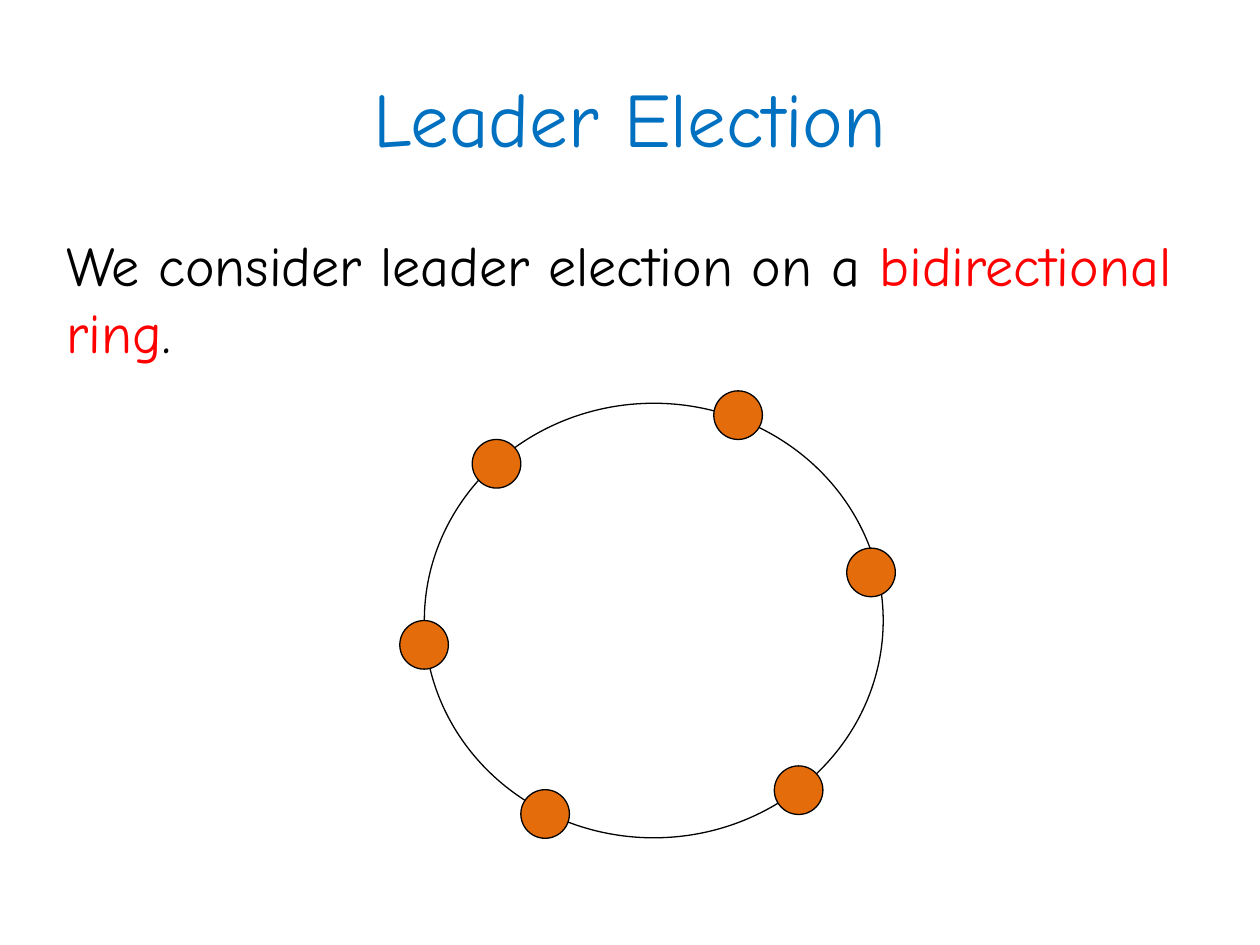
from dataclasses import dataclass

from pptx import Presentation
from pptx.dml.color import RGBColor as RGB
from pptx.enum.shapes import MSO_SHAPE as Shape
from pptx.enum.text import MSO_ANCHOR as Anchor, MSO_AUTO_SIZE as AutoSize, PP_ALIGN as Align
from pptx.oxml.xmlchemy import OxmlElement
from pptx.util import Cm, Pt


@dataclass(frozen=True)
class Theme:
    font: str = "Comic Neue"
    title: RGB = RGB(0x00, 0x70, 0xC0)
    ink: RGB = RGB(0x00, 0x00, 0x00)
    accent: RGB = RGB(0xFF, 0x00, 0x00)
    node: RGB = RGB(0xE4, 0x6C, 0x0A)
    title_size: float = 44
    body_size: float = 32
    line: float = 0.75


@dataclass(frozen=True)
class Ellipse:
    cx: float
    cy: float
    width: float
    height: float
    fill: RGB | None = None


THEME = Theme()
NODE_SIZE = 0.98
RING = Ellipse(13.18, 12.51, 9.25, 8.76)
NODE_CENTERS = [
    (14.88, 8.37),
    (17.56, 11.54),
    (16.1, 15.93),
    (10.99, 16.41),
    (8.55, 13),
    (10.01, 9.35),
]


def place(sp, left: float, top: float, width: float, height: float) -> None:
    sp.left, sp.top, sp.width, sp.height = map(Cm, (left, top, width, height))


def add_text(p, text: str, *, size: float, color: RGB) -> None:
    r = p.add_run()
    r.text = text
    r.font.name = THEME.font
    r.font.size = Pt(size)
    r.font.color.rgb = color


def add_ellipse(shapes, e: Ellipse) -> None:
    sp = shapes.add_shape(Shape.OVAL, 0, 0, 0, 0)
    place(sp, e.cx - e.width / 2, e.cy - e.height / 2, e.width, e.height)
    sp.shadow.inherit = False
    if e.fill is None:
        sp.fill.background()
    else:
        sp.fill.solid()
        sp.fill.fore_color.rgb = e.fill
    sp.line.color.rgb = THEME.ink
    sp.line.width = Pt(THEME.line)


def fill_title(sp) -> None:
    place(sp, 1.27, 0.76, 22.86, 3.18)
    tf = sp.text_frame
    tf.vertical_anchor = Anchor.MIDDLE
    p = tf.paragraphs[0]
    p.alignment = Align.CENTER
    add_text(p, "Leader Election", size=THEME.title_size, color=THEME.title)


def fill_body(sp) -> None:
    place(sp, 1.09, 4.52, 23.19, 6.55)
    tf = sp.text_frame
    tf.word_wrap = True
    tf.auto_size = AutoSize.NONE
    tf.vertical_anchor = Anchor.TOP
    p = tf.paragraphs[0]
    p.space_before = Pt(0.3 * THEME.body_size)
    pPr = p._p.get_or_add_pPr()
    pPr.set("marL", "0")
    pPr.set("indent", "0")
    pPr.append(OxmlElement("a:buNone"))
    for text, color in (
        ("We consider leader election on a ", THEME.ink),
        ("bidirectional ring", THEME.accent),
        (".", THEME.ink),
    ):
        add_text(p, text, size=THEME.body_size, color=color)


def add_ring(s) -> None:
    group = s.shapes.add_group_shape()
    add_ellipse(group.shapes, RING)
    for cx, cy in NODE_CENTERS:
        add_ellipse(group.shapes, Ellipse(cx, cy, NODE_SIZE, NODE_SIZE, THEME.node))


def main() -> None:
    prs = Presentation()
    prs.slide_width, prs.slide_height = Cm(25.4), Cm(19.05)
    s = prs.slides.add_slide(prs.slide_layouts[1])
    fill_title(s.shapes.title)
    fill_body(s.placeholders[1])
    add_ring(s)
    prs.save("out.pptx")


if __name__ == "__main__":
    main()
